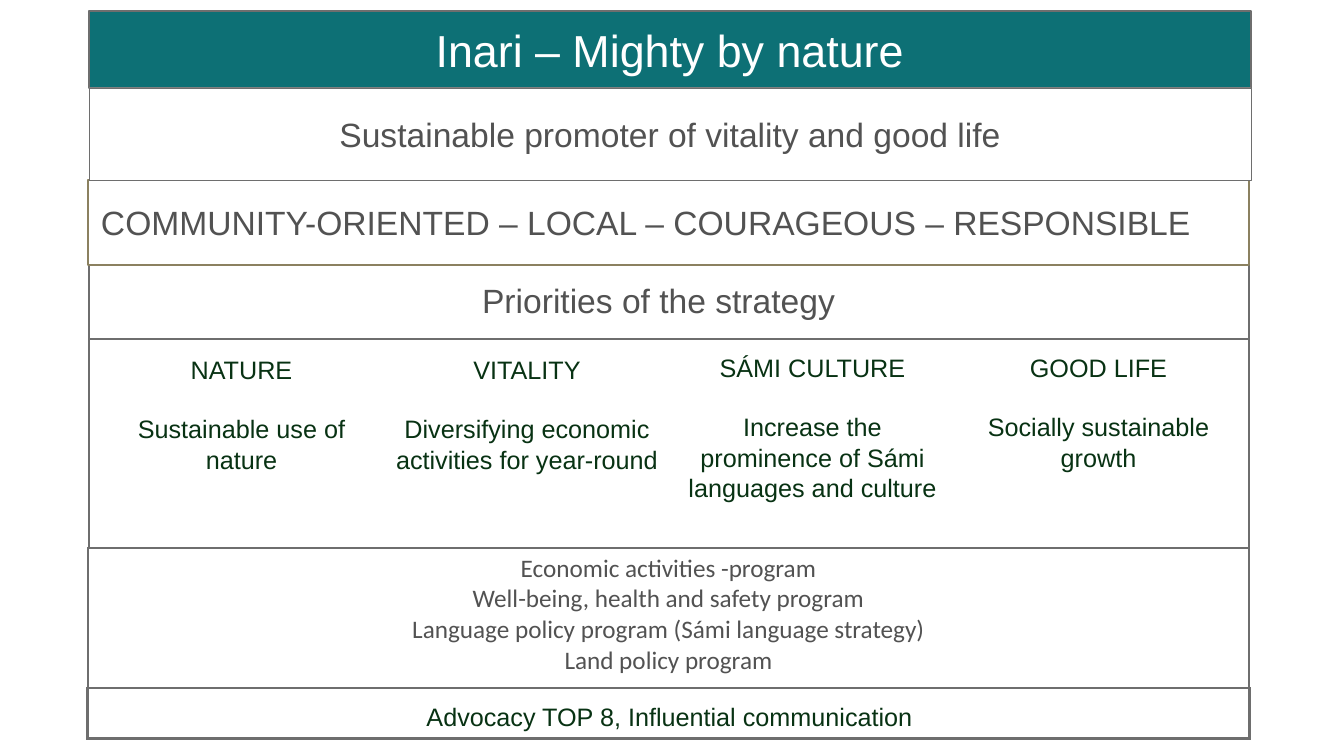
from lxml import etree
from pptx import Presentation, util as u
from pptx.dml.color import RGBColor
from pptx.enum import shapes, text
from pptx.oxml.ns import qn

EMU_PER_PX = 914400 / 100.8
TEAL, WHITE, GREEN = "0D7075", "FFFFFF", "083213"
GREY, BORDER, OLIVE = "525252", "6E6E6E", "8B8160"
CENTER, LEFT = text.PP_ALIGN.CENTER, text.PP_ALIGN.LEFT
MIDDLE, TOP = text.MSO_ANCHOR.MIDDLE, text.MSO_ANCHOR.TOP

PROGRAMS = [
    "Economic activities -program",
    "Well-being, health and safety program",
    "Language policy program (Sámi language strategy)",
    "Land policy program",
]
# left, top, width, height, heading and goal of each priority
PRIORITIES = [
    (94, 349, 295, 188, "NATURE", "Sustainable use of nature"),
    (386, 349, 282, 188, "VITALITY",
     "Diversifying economic activities for year-round"),
    (668, 347, 289, 190, "SÁMI CULTURE",
     "Increase the prominence of Sámi languages and culture"),
    (952, 347, 293, 190, "GOOD LIFE", "Socially sustainable growth"),
]


def px(length):
    return u.Emu(round(length * EMU_PER_PX))


def color(hex_string):
    return RGBColor.from_string(hex_string)


def write(frame, lines, size, font_color, font="Arial", align=CENTER, gap=0):
    """Fill a text frame with one paragraph per line, gap points apart."""
    frame.word_wrap = True
    for index, line in enumerate(lines):
        paragraph = frame.add_paragraph() if index else frame.paragraphs[0]
        paragraph.alignment = align
        if index and gap:
            paragraph.space_before = u.Pt(gap)
        run = paragraph.add_run()
        run.text = line
        run.font.size = u.Pt(size)
        run.font.name = font
        run.font.color.rgb = color(font_color)


def paint(shape, fill, line=None, width=1):
    shape.fill.solid()
    shape.fill.fore_color.rgb = color(fill)
    if line:
        shape.line.color.rgb = color(line)
        shape.line.width = u.Pt(width)
    else:
        shape.line.fill.background()


def add_box(slide, left, top, width, height, line=None, line_width=1,
            anchor=MIDDLE):
    """Add a white rectangle and return its text frame."""
    shape = slide.shapes.add_shape(shapes.MSO_SHAPE.RECTANGLE, px(left),
                                   px(top), px(width), px(height))
    shape.shadow.inherit = False
    paint(shape, WHITE, line, line_width)
    shape.text_frame.vertical_anchor = anchor
    return shape.text_frame


def add_borders(cell):
    properties = cell._tc.get_or_add_tcPr()
    for index, side in enumerate(("a:lnL", "a:lnR", "a:lnT", "a:lnB")):
        line = etree.Element(qn(side), w=str(u.Pt(1)))
        fill = etree.SubElement(line, qn("a:solidFill"))
        etree.SubElement(fill, qn("a:srgbClr"), val=BORDER)
        properties.insert(index, line)


def add_framed_table(slide, left, top, width, row_heights):
    """Add a one-column table without fill and return it."""
    table = slide.shapes.add_table(len(row_heights), 1, px(left), px(top),
                                   px(width), px(sum(row_heights))).table
    table.first_row = table.horz_banding = False
    for row, height in zip(table.rows, row_heights):
        row.height = px(height)
        row.cells[0].fill.background()
        add_borders(row.cells[0])
    return table


def add_title(slide):
    title = slide.shapes.title
    title.left, title.top, title.width, title.height = map(
        px, (89, 11, 1162, 77))
    paint(title, TEAL, BORDER, 2)
    title.text_frame.auto_size = text.MSO_AUTO_SIZE.NONE
    title.text_frame.vertical_anchor = MIDDLE
    write(title.text_frame, ["Inari – Mighty by nature"], 32, WHITE)


def add_priorities(slide):
    table = add_framed_table(slide, 89, 265, 1160, [74, 209])
    heading = table.cell(0, 0)
    heading.vertical_anchor = MIDDLE
    heading.margin_right = px(31)
    write(heading.text_frame, ["Priorities of the strategy"], 24, GREY)
    for left, top, width, height, name, goal in PRIORITIES:
        frame = add_box(slide, left, top, width, height, anchor=TOP)
        frame.margin_left = frame.margin_right = px(9)
        write(frame, [name, goal], 18, GREEN, gap=21)


def add_advocacy(slide):
    add_framed_table(slide, 87, 688, 1163, [51])
    label = slide.shapes.add_textbox(px(89), px(681), px(1161), px(70))
    label.text_frame.vertical_anchor = MIDDLE
    write(label.text_frame, ["Advocacy TOP 8, Influential communication"],
          18, GREEN)


def main():
    presentation = Presentation()
    presentation.slide_width = px(1344)
    presentation.slide_height = px(756)
    slide = presentation.slides.add_slide(presentation.slide_layouts[5])

    add_title(slide)

    programs = add_framed_table(slide, 88, 548, 1161, [190])
    write(programs.cell(0, 0).text_frame, PROGRAMS, 18, GREY, "Calibri")
    add_advocacy(slide)
    add_priorities(slide)

    values = add_box(slide, 88, 180, 1161, 85, OLIVE)
    values.margin_left = px(13)
    write(values, ["COMMUNITY-ORIENTED – LOCAL – COURAGEOUS – RESPONSIBLE"],
          24, GREY, align=LEFT)

    vision = add_box(slide, 89, 88, 1162, 92, BORDER, 0.5)
    write(vision, ["Sustainable promoter of vitality and good life"], 24, GREY)

    presentation.save("out.pptx")


if __name__ == "__main__":
    main()
